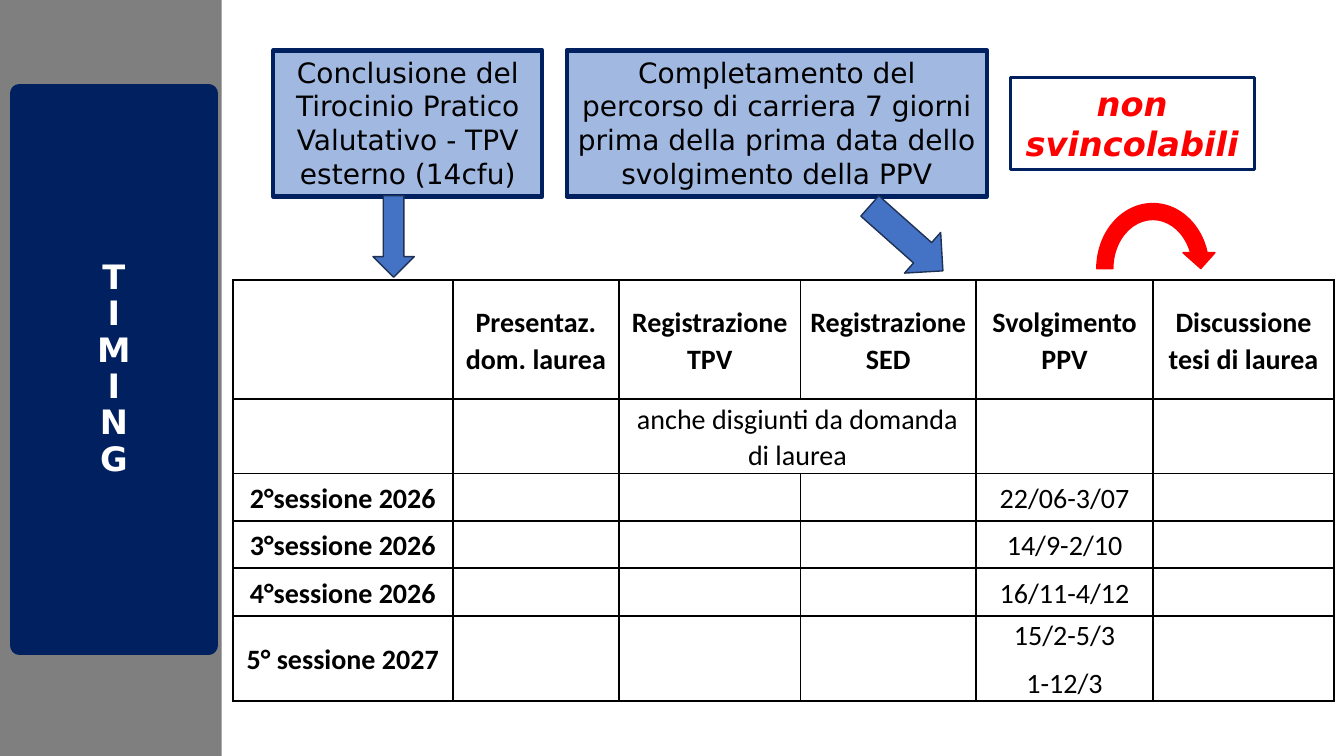
from pptx import Presentation
from pptx.dml.color import RGBColor
from pptx.enum.shapes import MSO_SHAPE
from pptx.enum.text import MSO_ANCHOR, PP_ALIGN
from pptx.oxml.ns import qn
from pptx.util import Inches, Pt
from lxml import etree

RECT, DOWN, CURVED = MSO_SHAPE.RECTANGLE, MSO_SHAPE.DOWN_ARROW, MSO_SHAPE.CIRCULAR_ARROW
TOP, MIDDLE = MSO_ANCHOR.TOP, MSO_ANCHOR.MIDDLE
CENTER = PP_ALIGN.CENTER

COLORS = {"navy": "002060", "grey": "7F7F7F", "blue": "4472C4", "edge": "1E3256",
          "red": "FF0000", "white": "FFFFFF", "black": "000000"}
TITLE_FONT = {"name": "DejaVu Sans", "size": Pt(24), "bold": True}
WARNING_FONT = {**TITLE_FONT, "italic": True}
CALLOUT_FONT = {"name": "DejaVu Sans", "size": Pt(20)}
TABLE_FONT = {"name": "Calibri", "size": Pt(20)}

COLUMN_SHARES = [2.18, 1.65, 1.8, 1.74, 1.76, 1.79]
ROW_SHARES = [1.18, 0.73, 0.47, 0.47, 0.47, 0.83]
HEADERS = ["", "Presentaz. dom. laurea", "Registrazione\nTPV", "Registrazione SED",
           "Svolgimento PPV", "Discussione tesi di laurea"]
SESSIONS = [("2°sessione 2026", "22/06-3/07"), ("3°sessione 2026", "14/9-2/10"),
            ("4°sessione 2026", "16/11-4/12"), ("5° sessione 2027", "15/2-5/3\n1-12/3")]
TPV_SHIFT = Inches(-0.44)


def rgb(color):
    return RGBColor.from_string(COLORS[color])


def inside(box, left, top, width, height):
    """Return the part of box given in percent of its size."""
    x, y, w, h = box
    return (int(x + w * left / 100), int(y + h * top / 100),
            int(w * width / 100), int(h * height / 100))


def style(paragraph, font, color, **layout):
    for key, value in {"alignment": CENTER, **layout}.items():
        setattr(paragraph, key, value)
    for key, value in font.items():
        setattr(paragraph.font, key, value)
    paragraph.font.color.rgb = rgb(color)


def add_block(slide, box, kind=RECT, fill=None, line=None, width=1, alpha=None):
    block = slide.shapes.add_shape(kind, *box)
    block.shadow.inherit = False
    if fill:
        block.fill.solid()
        block.fill.fore_color.rgb = rgb(fill)
    else:
        block.fill.background()
    if alpha:
        tint = block.fill._xPr.find(qn("a:solidFill"))[0]
        etree.SubElement(tint, qn("a:alpha"), val=str(alpha * 1000))
    if line:
        block.line.color.rgb = rgb(line)
        block.line.width = Pt(width)
    else:
        block.line.fill.background()
    return block


def write(block, text, font, color, anchor=TOP):
    frame = block.text_frame
    frame.word_wrap = True
    frame.vertical_anchor = anchor
    paragraph = frame.paragraphs[0]
    paragraph.text = text
    style(paragraph, font, color)
    return paragraph


def add_sidebar(slide, box):
    add_block(slide, box, fill="grey")
    plate = add_block(slide, inside(box, 8.64, 12.4, 85.45, 72.93),
                      fill="navy", line="navy", width=13.75)
    first, *others = "TIMING"
    title = write(plate, first, TITLE_FONT, "white", MIDDLE)
    title.line_spacing = 0.9
    for letter in others:
        title.add_line_break()
        title.add_run().text = letter
    for run in title.runs:
        for key, value in TITLE_FONT.items():
            setattr(run.font, key, value)


def add_conditions(slide, box):
    """Place the callouts above the table and the arrows down to its columns."""
    warning = add_block(slide, inside(box, 75.13, 9.34, 24.87, 31.5), line="navy", width=2)
    write(warning, "non svincolabili", WARNING_FONT, "red")
    callouts = [
        ((29.91, 0, 42.86, 50.17), "Completamento del percorso di carriera 7 giorni prima "
                                   "della prima data dello svolgimento della PPV"),
        ((0, 0, 27.44, 50.17), "Conclusione del Tirocinio Pratico Valutativo - TPV "
                               "esterno (14cfu)"),
    ]
    for place, text in callouts:
        callout = add_block(slide, inside(box, *place), fill="blue", line="navy",
                            width=3, alpha=50)
        write(callout, text, CALLOUT_FONT, "black")
    arrows = [
        ((83.14, 49.83, 13.05, 50.17), CURVED, "red", "red", 0),
        ((61.77, 47.75, 5.55, 33.56), DOWN, "blue", "edge", 311.6),
        ((10.17, 49.83, 4.21, 28.03), DOWN, "blue", "edge", 0),
    ]
    for place, kind, fill, line, rotation in arrows:
        arrow = add_block(slide, inside(box, *place), kind, fill, line)
        arrow.rotation = rotation


def add_borders(cell):
    properties = cell._tc.get_or_add_tcPr()
    for position, side in enumerate(("lnL", "lnR", "lnT", "lnB")):
        border = etree.Element(qn(f"a:{side}"), w=str(Pt(1.5)))
        solid = etree.SubElement(border, qn("a:solidFill"))
        etree.SubElement(solid, qn("a:srgbClr"), val=COLORS["black"])
        properties.insert(position, border)


def fill_cell(cell, text, bold, space_after=0, side=Inches(0.1)):
    layout = {"margin_left": side, "margin_right": side, "margin_top": Inches(0.01),
              "margin_bottom": 0, "vertical_anchor": MIDDLE}
    for key, value in layout.items():
        setattr(cell, key, value)
    cell.text = text
    for paragraph in cell.text_frame.paragraphs:
        style(paragraph, {**TABLE_FONT, "bold": bold}, "black",
              line_spacing=1.07, space_after=Pt(space_after))


def add_schedule(slide, box):
    rows, columns = len(ROW_SHARES), len(COLUMN_SHARES)
    table = slide.shapes.add_table(rows, columns, *box).table
    table.first_row = table.horz_banding = False
    for column, share in zip(table.columns, COLUMN_SHARES):
        column.width = int(box[2] * share / sum(COLUMN_SHARES))
    for row, share in zip(table.rows, ROW_SHARES):
        row.height = int(box[3] * share / sum(ROW_SHARES))
    for cell in table.iter_cells():
        cell.fill.background()
        add_borders(cell)

    for index, header in enumerate(HEADERS):
        if header:
            side = 0 if header.endswith("SED") else Inches(0.1)
            fill_cell(table.cell(0, index), header, True, side=side)
    tpv = table.cell(0, 2).text_frame.paragraphs[1]
    tpv._p.get_or_add_pPr().set("indent", str(TPV_SHIFT))

    table.cell(1, 2).merge(table.cell(1, 3))
    fill_cell(table.cell(1, 2), "anche disgiunti da domanda di laurea", False)
    for index, (session, dates) in enumerate(SESSIONS, start=2):
        fill_cell(table.cell(index, 0), session, True, 8)
        fill_cell(table.cell(index, 4), dates, False, 8)


def main():
    presentation = Presentation()
    presentation.slide_width = Inches(13.33)
    presentation.slide_height = Inches(7.5)
    page = (0, 0, presentation.slide_width, presentation.slide_height)
    slide = presentation.slides.add_slide(presentation.slide_layouts[6])
    add_sidebar(slide, inside(page, 0, 0, 16.5, 100))
    add_conditions(slide, inside(page, 20.33, 6.67, 72.99, 38.53))
    add_schedule(slide, inside(page, 17.33, 37.07, 81.92, 55.33))
    presentation.save("out.pptx")


if __name__ == "__main__":
    main()
